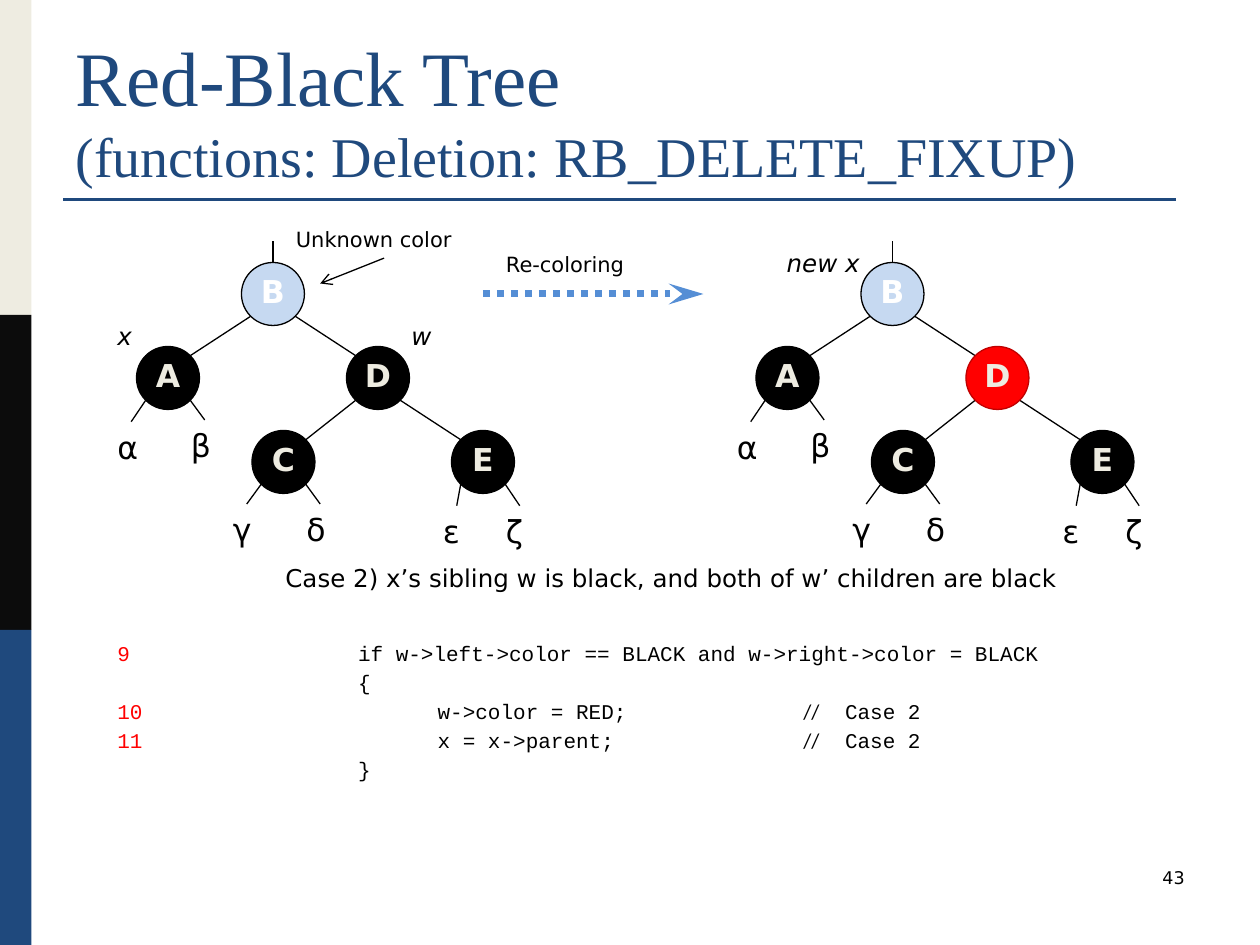
from lxml import etree
from pptx import Presentation
from pptx.dml.color import RGBColor
from pptx.enum.dml import MSO_LINE
from pptx.enum.shapes import MSO_CONNECTOR, MSO_SHAPE
from pptx.enum.text import MSO_ANCHOR, PP_ALIGN
from pptx.oxml.ns import qn
from pptx.util import Pt

BLACK = RGBColor(0, 0, 0)
WHITE = RGBColor(0xFF, 0xFF, 0xFF)
RED = RGBColor(0xFF, 0, 0)
MAROON = RGBColor(0xC0, 0, 0)
NAVY = RGBColor(0x1F, 0x49, 0x7D)
CREAM = RGBColor(0xEE, 0xEC, 0xE1)
INK = RGBColor(0x0C, 0x0C, 0x0C)
PALE = RGBColor(0xC6, 0xD9, 0xF1)
BLUE = RGBColor(0x55, 0x8E, 0xD5)

LINE = MSO_CONNECTOR.STRAIGHT
RECT, OVAL = MSO_SHAPE.RECTANGLE, MSO_SHAPE.OVAL
LEFT, CENTER, RIGHT = PP_ALIGN.LEFT, PP_ALIGN.CENTER, PP_ALIGN.RIGHT
TOP, MIDDLE, BOTTOM = MSO_ANCHOR.TOP, MSO_ANCHOR.MIDDLE, MSO_ANCHOR.BOTTOM
DOTS = MSO_LINE.ROUND_DOT
SANS, SERIF, MONO = "DejaVu Sans", "Times New Roman", "Courier New"

RADIUS = 18
DIAG = 12.73  # RADIUS at 45 degrees
LEAF = 30
NODES = {"B": (96, 30), "A": (36, 78), "D": (156, 78),
         "C": (102, 126), "E": (216, 126)}
EDGES = ["BA", "BD", "DC", "DE"]
# letter, parent, side, left, top
LEAVES = [("α", "A", -1, 0, 103), ("β", "A", 1, 42, 102),
          ("γ", "C", -1, 66, 150), ("δ", "C", 1, 108, 150),
          ("ε", "E", -1, 186, 151), ("ζ", "E", 1, 222, 151)]


def write(para, text, size=12, font=SANS, color=BLACK, bold=False,
          italic=False, align=LEFT):
    """Add a formatted run to a paragraph."""
    para.alignment = align
    run = para.add_run()
    run.text = text
    face = run.font
    face.size, face.name = Pt(size), font
    face.bold, face.italic = bold, italic
    face.color.rgb = color


def add_box(slide, x, y, w, h, anchor=TOP):
    frame = slide.shapes.add_textbox(Pt(x), Pt(y), Pt(w), Pt(h)).text_frame
    frame.word_wrap = True
    frame.vertical_anchor = anchor
    return frame


def label(slide, x, y, w, h, text, **form):
    write(add_box(slide, x, y, w, h).paragraphs[0], text, **form)


def add_line(slide, start, end, color=BLACK, width=0.75, dash=None,
             head=None, reach="med"):
    """Draw a line; head is its arrowhead and reach that head's length."""
    wire = slide.shapes.add_connector(LINE, *map(Pt, (*start, *end)))
    wire.line.color.rgb = color
    wire.line.width = Pt(width)
    if dash:
        wire.line.dash_style = dash
    props = wire._element.spPr
    if head:
        etree.SubElement(props.find(qn("a:ln")), qn("a:tailEnd"),
                         type=head, len=reach)
    etree.SubElement(props, qn("a:effectLst"))


def add_form(slide, kind, x, y, w, h, fill, edge=None):
    form = slide.shapes.add_shape(kind, Pt(x), Pt(y), Pt(w), Pt(h))
    form.shadow.inherit = False
    form.fill.solid()
    form.fill.fore_color.rgb = fill
    if edge is None:
        form.line.fill.background()
    else:
        form.line.color.rgb = edge
        form.line.width = Pt(0.75)
    return form


def add_node(slide, x, y, name, fill=BLACK, edge=BLACK, ink=CREAM):
    node = add_form(slide, OVAL, x - RADIUS, y - RADIUS,
                    2 * RADIUS, 2 * RADIUS, fill, edge)
    frame = node.text_frame
    frame.margin_left = frame.margin_right = frame.margin_top = 0
    frame.margin_bottom = Pt(3.6)
    frame.vertical_anchor = MIDDLE
    frame.word_wrap = False
    write(frame.paragraphs[0], name, size=18, color=ink, bold=True,
          align=CENTER)


def draw_tree(slide, left, top, paint):
    """Draw the tree; paint maps a node to its fill, edge and text colours."""
    spots = {name: (left + x, top + y) for name, (x, y) in NODES.items()}
    root_x, root_y = spots["B"]
    add_line(slide, (root_x, root_y - RADIUS), (root_x, top))
    for up, down in EDGES:
        (x1, y1), (x2, y2) = spots[up], spots[down]
        step = DIAG if x2 > x1 else -DIAG
        add_line(slide, (x1 + step, y1 + DIAG), (x2 - step, y2 - DIAG))
    for letter, up, side, x, y in LEAVES:
        px, py = spots[up]
        add_line(slide, (px + side * DIAG, py + DIAG),
                 (left + x + LEAF / 2, top + y))
        label(slide, left + x, top + y, LEAF, 29, letter, size=18)
    for name, (x, y) in spots.items():
        add_node(slide, x, y, name, *paint.get(name, ()))


def draw_frame(slide, width, height):
    """Side bars, title, rule and page number."""
    part = height / 3
    for i, color in enumerate((CREAM, INK, NAVY)):
        add_form(slide, RECT, 0, i * part, 18, part, color)
    add_line(slide, (36, 114), (width - 48, 114), NAVY, 1.5)
    para = add_box(slide, 36, 21.5, 648, 90, BOTTOM).paragraphs[0]
    write(para, "Red-Black Tree", size=44, font=SERIF, color=NAVY)
    para.add_line_break()
    write(para, "(functions: Deletion: RB_DELETE_FIXUP)", size=32,
          font=SERIF, color=NAVY)
    label(slide, width - 204, 492, 168, 36, "43", size=10, align=RIGHT)


def draw_step(slide, top):
    """The two trees and the recoloring between them."""
    root = {"B": (PALE, BLACK, WHITE)}
    draw_tree(slide, 60, top, root)
    draw_tree(slide, 414, top, root | {"D": (RED, MAROON)})
    for x, y, w, name in ((60, 42, 30, "x"), (228, 42, 30, "w"),
                          (442.5, 0, 67, "new x")):
        label(slide, x, top + y, w, 24, name, size=14, italic=True)
    label(slide, 162, top - 12, 115, 22, "Unknown color")
    add_line(slide, (219.5, top + 9.5), (183, top + 24), head="arrow")
    label(slide, 282, top + 2, 84, 22, "Re-coloring")
    add_line(slide, (276, top + 30), (402, top + 30), BLUE, 4, DOTS,
             "stealth", "lg")
    label(slide, 156, top + 180, 462, 24,
          "Case 2) x’s sibling w is black, and both of w’ children are black",
          size=14)


def set_tabs(para, stops):
    tabs = etree.SubElement(para._p.get_or_add_pPr(), qn("a:tabLst"))
    for stop in stops:
        etree.SubElement(tabs, qn("a:tab"), pos=str(Pt(stop)), algn="l")


def draw_code(slide, x, y, w, h):
    rows = [
        ("9", "\tif w->left->color == BLACK and w->right->color = BLACK", ""),
        ("", "\t{", ""),
        ("10", "\t\tw->color = RED;", "Case 2"),
        ("11", "\t\tx = x->parent;", "Case 2"),
        ("", "\t}", ""),
    ]
    frame = add_box(slide, x, y, w, h)
    for i, (num, code, note) in enumerate(rows):
        para = frame.add_paragraph() if i else frame.paragraphs[0]
        para.line_spacing = 1.15
        set_tabs(para, (137.5, 183, 392, 415.8))
        if num:
            write(para, num, font=MONO, color=RED)
        write(para, code, font=MONO)
        if note:
            write(para, "\t//", font="Calibri")
            write(para, "\t" + note, font=MONO)


def main():
    deck = Presentation()
    width, height = 720, 540
    deck.slide_width, deck.slide_height = Pt(width), Pt(height)
    slide = deck.slides.add_slide(deck.slide_layouts[6])
    draw_frame(slide, width, height)
    draw_step(slide, 138)
    draw_code(slide, 60, 360.4, 606, 91)
    deck.save("out.pptx")


if __name__ == "__main__":
    main()
